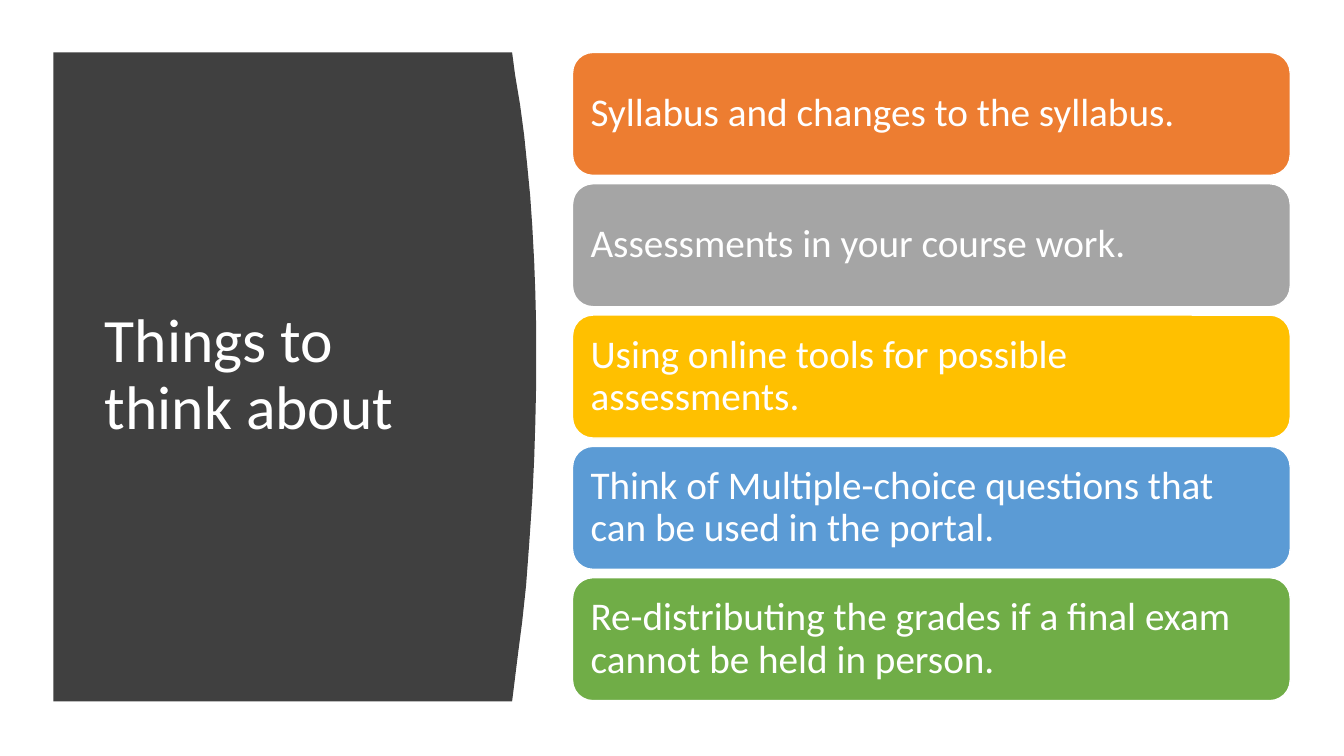
from dataclasses import dataclass

from pptx import Presentation
from pptx.dml.color import RGBColor
from pptx.enum.shapes import MSO_SHAPE
from pptx.enum.text import MSO_ANCHOR, MSO_AUTO_SIZE, PP_ALIGN
from pptx.util import Pt

ROUNDED = MSO_SHAPE.ROUNDED_RECTANGLE
MIDDLE = MSO_ANCHOR.MIDDLE
NO_FIT = MSO_AUTO_SIZE.NONE
LEFT = PP_ALIGN.LEFT
TITLE_ONLY = 5


@dataclass(frozen=True)
class Theme:
    font: str = "Calibri"
    panel: str = "404040"
    white: str = "FFFFFF"
    orange: str = "ED7D31"
    grey: str = "A5A5A5"
    gold: str = "FFC000"
    blue: str = "5B9BD5"
    green: str = "70AD47"
    title_size: int = 44
    card_size: int = 28


THEME = Theme()

CARDS = [
    ("Syllabus and changes to the syllabus.", THEME.orange),
    ("Assessments in your course work.", THEME.grey),
    ("Using online tools for possible assessments.", THEME.gold),
    ("Think of Multiple-choice questions that can be used in the portal.", THEME.blue),
    ("Re-distributing the grades if a final exam cannot be held in person.", THEME.green),
]
CARD_LEFT, CARD_TOP, CARD_WIDTH, CARD_HEIGHT = 408.96, 37.44, 512.64, 87.84
CARD_PITCH = 93.8
CARD_INSET = 8.64

PANEL_LEFT = 38.2
PANEL_EDGE = [
    (365.8, 37.4), (367.9, 53.3), (371.5, 74.9), (374.4, 96.5), (376.6, 118.1),
    (378.7, 139.7), (380.2, 161.3), (381.6, 187.2), (382.4, 208.8), (383, 234),
    (383, 273.6), (382.4, 302.4), (381.6, 327.6), (380.2, 356.4), (378, 388.8),
    (375.8, 418.3), (373, 444.2), (370.1, 466.6), (365.8, 501.1),
]


def apply_format(target, values):
    for name, value in values.items():
        setattr(target, name, value)


def paint(shape, color):
    shape.shadow.inherit = False
    shape.fill.solid()
    shape.fill.fore_color.rgb = RGBColor.from_string(color)


def write_text(shape, text, size, inset_x, inset_y):
    frame = shape.text_frame
    apply_format(frame, {
        "word_wrap": True,
        "auto_size": NO_FIT,
        "vertical_anchor": MIDDLE,
        "margin_left": Pt(inset_x),
        "margin_right": Pt(inset_x),
        "margin_top": Pt(inset_y),
        "margin_bottom": Pt(inset_y),
    })
    para = frame.paragraphs[0]
    apply_format(para, {"alignment": LEFT, "line_spacing": 0.9, "space_before": Pt(0)})
    span = para.add_run()
    span.text = text
    apply_format(span.font, {"name": THEME.font, "size": Pt(size)})
    span.font.color.rgb = RGBColor.from_string(THEME.white)


def add_panel(page):
    top, bottom = PANEL_EDGE[0][1], PANEL_EDGE[-1][1]
    outline = page.shapes.build_freeform(Pt(PANEL_LEFT), Pt(top))
    corners = [*PANEL_EDGE, (PANEL_LEFT, bottom)]
    outline.add_line_segments([(Pt(x), Pt(y)) for x, y in corners], close=True)
    panel = outline.convert_to_shape()
    paint(panel, THEME.panel)
    panel.line.fill.background()
    page.shapes._spTree.insert(2, panel._element)


def format_title(page, text):
    title = page.shapes.title
    apply_format(title, {
        "left": Pt(67.7), "top": Pt(79.9), "width": Pt(269.3), "height": Pt(377.3),
    })
    write_text(title, text, THEME.title_size, 7.2, 3.6)


def add_card(page, index, text, color):
    top = CARD_TOP + index * CARD_PITCH
    card = page.shapes.add_shape(
        ROUNDED, Pt(CARD_LEFT), Pt(top), Pt(CARD_WIDTH), Pt(CARD_HEIGHT))
    paint(card, color)
    card.line.color.rgb = RGBColor.from_string(THEME.white)
    card.line.width = Pt(1)
    write_text(card, text, THEME.card_size, CARD_INSET, CARD_INSET)


def main():
    deck = Presentation()
    apply_format(deck, {"slide_width": Pt(960), "slide_height": Pt(540)})
    page = deck.slides.add_slide(deck.slide_layouts[TITLE_ONLY])
    add_panel(page)
    format_title(page, "Things to think about")
    for index, (text, color) in enumerate(CARDS):
        add_card(page, index, text, color)
    deck.save("out.pptx")


if __name__ == "__main__":
    main()
